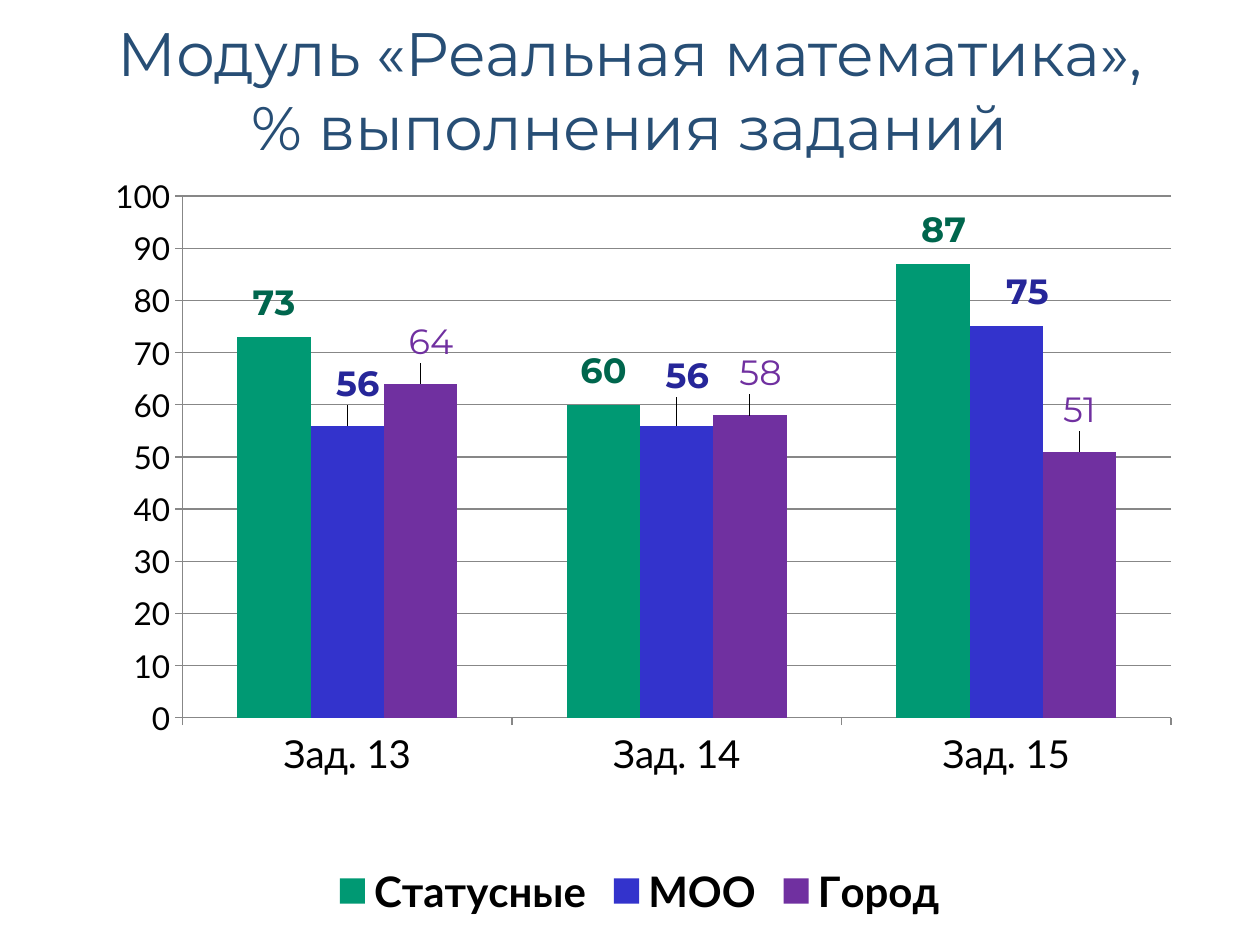
from lxml import etree
from pptx import Presentation
from pptx.chart.data import CategoryChartData
from pptx.dml.color import RGBColor
from pptx.enum.chart import XL_CHART_TYPE, XL_LABEL_POSITION, XL_LEGEND_POSITION, XL_TICK_MARK
from pptx.enum.text import MSO_ANCHOR, PP_ALIGN
from pptx.oxml.ns import qn
from pptx.util import Cm, Pt

COLUMNS = XL_CHART_TYPE.COLUMN_CLUSTERED
OUTSIDE_END = XL_LABEL_POSITION.OUTSIDE_END
BOTTOM = XL_LEGEND_POSITION.BOTTOM
TICK_OUTSIDE = XL_TICK_MARK.OUTSIDE
TICK_NONE = XL_TICK_MARK.NONE

TITLE = "Модуль «Реальная математика»,\v% выполнения заданий"
TASKS = ["Зад. 13", "Зад. 14", "Зад. 15"]
GROUPS = [
    {"name": "Статусные", "values": (73, 60, 87), "fill": "009973", "label": "00664D",
     "bold": True, "shifts": ((0, -0.01), (0, -0.01), (0.01, -0.01))},
    {"name": "МОО", "values": (56, 56, 75), "fill": "3333CC", "label": "262699",
     "bold": True, "shifts": ((0.01, -0.02), (0.01, -0.03), (0.02, -0.01))},
    {"name": "Город", "values": (64, 58, 51), "fill": "7030A0", "label": "7030A0",
     "bold": False, "shifts": ((0.01, -0.02), (0.01, -0.02), (0, -0.02))},
]
PLOT_AREA = {"layoutTarget": "inner", "xMode": "edge", "yMode": "edge",
             "x": 0.07, "y": 0.05, "w": 0.93, "h": 0.68}
GRID_COLOR = "878787"


def style_font(font, size, color, name, bold=False):
    font.size, font.name, font.bold = Pt(size), name, bold
    font.color.rgb = RGBColor.from_string(color)


def make_layout(settings):
    layout = etree.Element(qn("c:layout"))
    manual = etree.SubElement(layout, qn("c:manualLayout"))
    for tag, value in settings.items():
        etree.SubElement(manual, qn(f"c:{tag}")).set("val", str(value))
    return layout


def add_title(slide):
    title = slide.shapes.title
    title.left, title.top, title.width, title.height = Cm(0), Cm(0.41), Cm(25.4), Cm(2.77)
    frame = title.text_frame
    frame.text = TITLE
    frame.word_wrap = True
    frame.vertical_anchor = MSO_ANCHOR.MIDDLE
    paragraph = frame.paragraphs[0]
    paragraph.alignment = PP_ALIGN.CENTER
    for run in paragraph.runs:
        style_font(run.font, 35, "274E75", "Montserrat")


def style_axes(chart):
    value_axis, category_axis = chart.value_axis, chart.category_axis
    value_axis.minimum_scale, value_axis.maximum_scale, value_axis.major_unit = 0, 100, 10
    value_axis.has_major_gridlines = True
    for line in (value_axis.major_gridlines.format.line,
                 value_axis.format.line, category_axis.format.line):
        line.color.rgb = RGBColor.from_string(GRID_COLOR)
        line.width = Pt(0.75)
    for axis, size in ((value_axis, 18), (category_axis, 22)):
        axis.major_tick_mark, axis.minor_tick_mark = TICK_OUTSIDE, TICK_NONE
        style_font(axis.tick_labels.font, size, "000000", "Lato")


def style_series(series, group):
    series.format.fill.solid()
    series.format.fill.fore_color.rgb = RGBColor.from_string(group["fill"])
    for index in range(len(TASKS)):
        label = series.points[index].data_label
        label.position = OUTSIDE_END
        style_font(label.font, 20, group["label"], "Montserrat", group["bold"])
    label_elements = series._element.iter(qn("c:dLbl"))
    for element, (x, y) in zip(label_elements, group["shifts"]):
        element.find(qn("c:idx")).addnext(make_layout({"x": x, "y": y}))


def add_chart(slide):
    data = CategoryChartData()
    data.categories = TASKS
    for group in GROUPS:
        data.add_series(group["name"], group["values"])
    chart = slide.shapes.add_chart(COLUMNS, Cm(2.18), Cm(3.18), Cm(21.44), Cm(15.47), data).chart
    style_font(chart.font, 18, "000000", "Lato")
    chart.has_title = False
    chart.has_legend = True
    chart.legend.position = BOTTOM
    chart.legend.include_in_layout = False
    style_font(chart.legend.font, 24, "000000", "Lato", True)
    style_axes(chart)
    plot = chart.plots[0]
    plot.vary_by_categories = False
    plot.gap_width, plot.overlap = 150, 0
    for series, group in zip(plot.series, GROUPS):
        style_series(series, group)
    plot_area = chart._chartSpace.chart.plotArea
    for layout in plot_area.findall(qn("c:layout")):
        plot_area.remove(layout)
    plot_area.insert(0, make_layout(PLOT_AREA))


def main():
    """Build the slide with the column chart of task results."""
    presentation = Presentation()
    presentation.slide_width, presentation.slide_height = Cm(25.4), Cm(19.05)
    slide = presentation.slides.add_slide(presentation.slide_layouts[5])
    add_title(slide)
    add_chart(slide)
    presentation.save("out.pptx")


if __name__ == "__main__":
    main()
